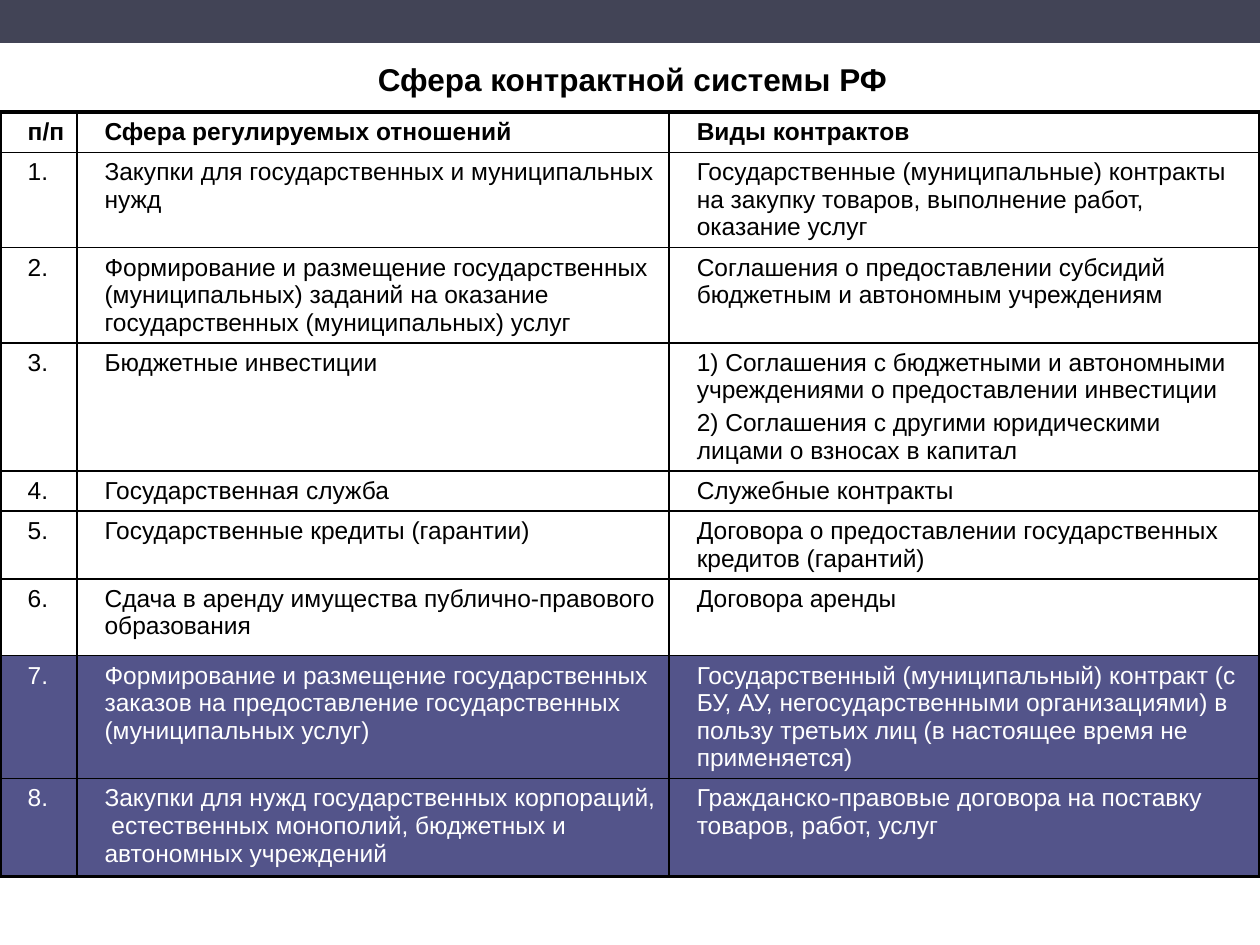
from lxml.etree import SubElement
from pptx import Presentation
from pptx.dml.color import RGBColor
from pptx.enum.shapes import MSO_SHAPE
from pptx.enum.text import MSO_ANCHOR, PP_ALIGN
from pptx.oxml.ns import qn
from pptx.util import Inches, Pt

TITLE = "Сфера контрактной системы РФ"
HEADER = ("п/п", "Сфера регулируемых отношений", "Виды контрактов")
ROWS = [
    ("Закупки для государственных и муниципальных нужд",
     "Государственные (муниципальные) контракты на закупку товаров, выполнение работ, оказание услуг"),
    ("Формирование и размещение государственных (муниципальных) заданий на оказание "
     "государственных (муниципальных) услуг",
     "Соглашения о предоставлении субсидий бюджетным и автономным учреждениям"),
    ("Бюджетные инвестиции",
     "1) Соглашения с бюджетными и автономными учреждениями о предоставлении инвестиции\n"
     "2) Соглашения с другими юридическими лицами о взносах в капитал"),
    ("Государственная служба", "Служебные контракты"),
    ("Государственные кредиты (гарантии)",
     "Договора о предоставлении государственных кредитов (гарантий)"),
    ("Сдача в аренду имущества публично-правового образования", "Договора аренды"),
    ("Формирование и размещение государственных заказов на предоставление "
     "государственных (муниципальных услуг)",
     "Государственный (муниципальный) контракт (с БУ, АУ, негосударственными организациями) "
     "в пользу третьих лиц (в настоящее время не применяется)"),
    ("Закупки для нужд государственных корпораций,  естественных монополий, "
     "бюджетных и автономных учреждений",
     "Гражданско-правовые договора на поставку товаров, работ, услуг"),
]
COL_WIDTHS = [0.61, 4.7, 4.69]
ROW_HEIGHTS = [0.25, 0.51, 0.63, 0.8, 0.28, 0.34, 0.61, 0.63, 0.78]
FIRST_DARK_ROW = 7
BLACK, WHITE, BAR, DARK = "000000", "FFFFFF", "424456", "53548A"
THIN, THICK = 1, 2.25


def paint(fill, color):
    """Give a fill one solid colour."""
    fill.solid()
    fill.fore_color.rgb = RGBColor.from_string(color)


def write(tf, text, size=14, color=BLACK, bold=False, align=PP_ALIGN.LEFT, before=0, indent=0):
    """Write each line of text as a formatted paragraph."""
    for i, line in enumerate(text.split("\n")):
        p = tf.paragraphs[0] if i == 0 else tf.add_paragraph()
        p.alignment, p.space_before = align, Pt(before)
        pPr = p._p.get_or_add_pPr()
        pPr.set("marL", str(Inches(indent)))
        pPr.set("indent", "0")
        r = p.add_run()
        r.text = line
        r.font.name, r.font.size, r.font.bold = "Arial", Pt(size), bold
        r.font.color.rgb = RGBColor.from_string(color)


def set_borders(cell, widths):
    """Draw black cell borders with widths in points by side."""
    tcPr = cell._tc.get_or_add_tcPr()
    for i, (side, width) in enumerate(widths.items()):
        ln = SubElement(tcPr, qn(f"a:ln{side}"), w=str(Pt(width)))
        tcPr.insert(i, ln)
        SubElement(SubElement(ln, qn("a:solidFill")), qn("a:srgbClr"), val=BLACK)


def add_bar(s):
    """Draw the band along the top edge behind the title."""
    bar = s.shapes.add_shape(MSO_SHAPE.RECTANGLE, 0, 0, Inches(10), Inches(0.34))
    bar.shadow.inherit = False
    paint(bar.fill, BAR)
    bar.line.fill.background()
    s.shapes._spTree.insert(2, bar._element)


def add_title(s):
    """Place and format the slide title."""
    title = s.shapes.title
    title.left, title.top = Inches(0.52), 0
    title.width, title.height = Inches(9), Inches(1.25)
    title.text_frame.vertical_anchor = MSO_ANCHOR.MIDDLE
    write(title.text_frame, TITLE, size=18, bold=True, align=PP_ALIGN.CENTER)


def add_contract_table(s):
    """Build the table of relations and contract kinds."""
    data = [HEADER] + [(f"{n}.", *row) for n, row in enumerate(ROWS, 1)]
    last_row, last_col = len(data) - 1, len(HEADER) - 1
    table = s.shapes.add_table(len(data), len(HEADER), 0, Inches(0.89), Inches(10),
                               Inches(sum(ROW_HEIGHTS))).table
    table.first_row = table.horz_banding = False
    for col, width in zip(table.columns, COL_WIDTHS):
        col.width = Inches(width)
    for i, (row, height) in enumerate(zip(data, ROW_HEIGHTS)):
        table.rows[i].height = Inches(height)
        dark = i >= FIRST_DARK_ROW
        for j, text in enumerate(row):
            cell = table.cell(i, j)
            paint(cell.fill, DARK if dark else WHITE)
            write(cell.text_frame, text, color=WHITE if dark else BLACK,
                  bold=i == 0, before=3, indent=0.12)
            set_borders(cell, {"L": THICK if j == 0 else THIN,
                               "R": THICK if j == last_col else THIN,
                               "T": THICK if i == 0 else THIN,
                               "B": THICK if i == last_row else THIN})


def main():
    """Build and save the slide."""
    prs = Presentation()
    prs.slide_width, prs.slide_height = Inches(10), Inches(7.5)
    s = prs.slides.add_slide(prs.slide_layouts[5])
    add_bar(s)
    add_title(s)
    add_contract_table(s)
    prs.save("out.pptx")


if __name__ == "__main__":
    main()
